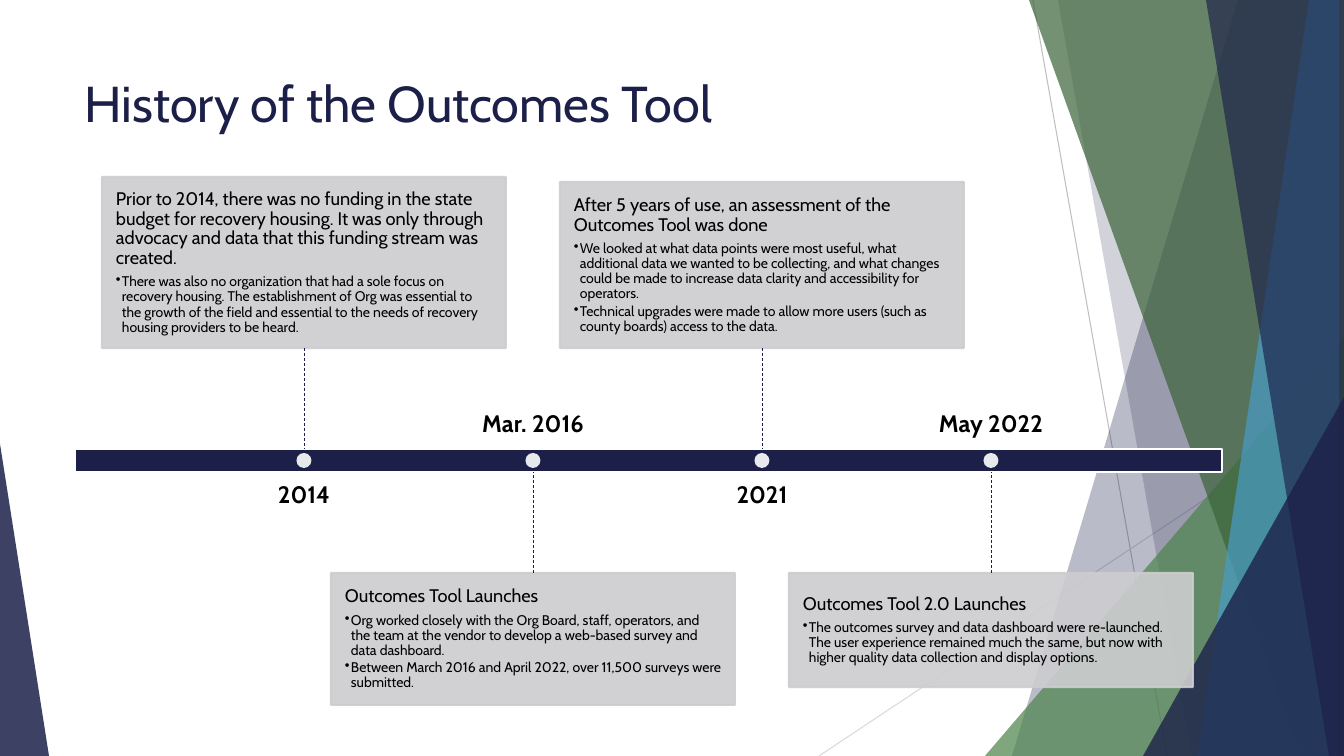
from lxml.etree import SubElement
from pptx import Presentation
from pptx.dml.color import RGBColor
from pptx.enum.dml import MSO_LINE
from pptx.enum.shapes import MSO_CONNECTOR, MSO_SHAPE
from pptx.enum.text import MSO_ANCHOR, PP_ALIGN
from pptx.oxml.ns import qn
from pptx.util import Pt

TITLE = "History of the Outcomes Tool"

# date, card height, heading, bullets; cards alternate above and below the bar
EVENTS = [
    ("2014", 171,
     "Prior to 2014, there was no funding in the state budget for recovery housing. "
     "It was only through advocacy and data that this funding stream was created.",
     ["There was also no organization that had a sole focus on recovery housing. "
      "The establishment of Org was essential to the growth of the field and essential "
      "to the needs of recovery housing providers to be heard."]),
    ("Mar. 2016", 132, "Outcomes Tool Launches",
     ["Org worked closely with the Org Board, staff, operators, and the team at "
      "the vendor to develop a web-based survey and data dashboard.",
      "Between March 2016 and April 2022, over 11,500 surveys were submitted."]),
    ("2021", 166,
     "After 5 years of use, an assessment of the Outcomes Tool was done",
     ["We looked at what data points were most useful, what additional data we wanted "
      "to be collecting, and what changes could be made to increase data clarity and "
      "accessibility for operators.",
      "Technical upgrades were made to allow more users (such as county boards) "
      "access to the data."]),
    ("May 2022", 114, "Outcomes Tool 2.0 Launches",
     ["The outcomes survey and data dashboard were re-launched. The user experience "
      "remained much the same, but now with higher quality data collection and "
      "display options."]),
]

THEME = {
    "font": "Cabin", "title": 36, "date": 17, "head": 13, "body": 10,
    "navy": "1C2049", "green": "4F844D", "moss": "3B633A", "sky": "489CC7",
    "card": "CDCDD0", "white": "FFFFFF", "text": "000000",
    "ray": "BFBFBF", "pale": "D9D9D9",
}

WIDE, HIGH = 1344, 756
RAYS = [((1033, 0), (1167, HIGH), "ray"), ((WIDE, 407), (819, HIGH), "pale")]
# ribbon: top x, right x, foot x; wedge: left, top, width, apex; then colour, opacity
DECOR = [
    ("ribbon", (1238, WIDE, 1012), "navy", 30),
    ("ribbon", (1058, WIDE, 1192), "navy", 20),
    ("wedge", (985, 337, 359, 1), "green", 72),
    ("ribbon", (1029, WIDE, 1301), "moss", 70),
    ("ribbon", (1309, 1339, 1197), "sky", 70),
    ("ribbon", (1206, WIDE, 1329), "navy", 65),
    ("wedge", (1143, 397, 201, 1), "navy", 80),
    ("wedge", (0, 444, 49, 0), "navy", 85),
]

BAR = (75, 449, 1147, 23)
FIRST, STEP = 304, 229
CARD, STEM, DOT = 404, 101, 15
DATE, TALL, GAP = 367, 67, 11
PAD, HANG = 14, 6
SCALE = 914400 / 100.8


def px(*nums):
    return [round(n * SCALE) for n in nums]


def put(item, **values):
    for name, value in values.items():
        setattr(item, name, value)


def tint(fill, name, alpha=100):
    fill.solid()
    fill.fore_color.rgb = RGBColor.from_string(THEME[name])
    if alpha < 100:
        for clr in fill._xPr.iter(qn("a:srgbClr")):
            SubElement(clr, qn("a:alpha"), val=str(alpha * 1000))


def paint(shape, fill, alpha=100, edge=None):
    shape.shadow.inherit = False
    tint(shape.fill, fill, alpha)
    if edge:
        tint(shape.line.fill, edge, alpha)
        shape.line.width = Pt(1.5)
    else:
        shape.line.fill.background()
    return shape


def rule(start, end, name, width):
    line = shapes.add_connector(MSO_CONNECTOR.STRAIGHT, *px(*start, *end))
    tint(line.line.fill, name)
    line.line.width = Pt(width)
    SubElement(line._element.spPr, qn("a:effectLst"))
    return line


def frame(shape, pad, anchor):
    box = shape.text_frame
    side = px(pad)[0]
    put(box, word_wrap=True, vertical_anchor=anchor, margin_left=side,
        margin_right=side, margin_top=side, margin_bottom=side)
    return box


def write(para, text, size, name="text", bold=False, **form):
    run = para.add_run()
    run.text = text
    put(run.font, name=THEME["font"], size=Pt(THEME[size]), bold=bold)
    run.font.color.rgb = RGBColor.from_string(THEME[name])
    put(para, **form)


def bullet(para):
    props = para._p.get_or_add_pPr()
    side = px(HANG)[0]
    props.set("marL", str(side))
    props.set("indent", str(-side))
    SubElement(props, qn("a:buChar"), char="•")


def ribbon(top, right, foot):
    path = shapes.build_freeform(top, 0, scale=SCALE)
    path.add_line_segments([(right, 0), (right, HIGH), (foot, HIGH)])
    return path.convert_to_shape()


def wedge(left, top, width, apex):
    shape = shapes.add_shape(MSO_SHAPE.ISOSCELES_TRIANGLE,
                             *px(left, top, width, HIGH - top))
    shape.adjustments[0] = apex
    return shape


def event(mid, above, date, high, head, notes):
    """Draw one date with its card, stem and dot."""
    top, foot = BAR[1], BAR[1] + BAR[3]
    edge = top if above else foot
    tip = top - STEM if above else foot + STEM
    left = mid - CARD // 2
    card = shapes.add_shape(MSO_SHAPE.RECTANGLE,
                            *px(left, tip - high if above else tip, CARD, high))
    paint(card, "card", 90, "card")
    box = frame(card, PAD, MSO_ANCHOR.MIDDLE)
    form = {"alignment": PP_ALIGN.LEFT, "line_spacing": 0.9}
    write(box.paragraphs[0], head, "head", space_after=Pt(4.5), **form)
    for note in notes:
        para = box.add_paragraph()
        write(para, note, "body", space_after=Pt(1.5), **form)
        bullet(para)

    stem = rule((mid, tip), (mid, edge), "navy", 0.5)
    stem.line.dash_style = MSO_LINE.DASH
    stem.begin_connect(card, 2 if above else 0)

    place = foot + GAP if above else top - GAP - TALL
    label = shapes.add_textbox(*px(mid - DATE / 2, place, DATE, TALL))
    box = frame(label, 0, MSO_ANCHOR.TOP if above else MSO_ANCHOR.BOTTOM)
    write(box.paragraphs[0], date, "date", bold=True, alignment=PP_ALIGN.CENTER,
          line_spacing=0.9, space_after=Pt(6))

    core = (top + foot) / 2
    dot = shapes.add_shape(MSO_SHAPE.OVAL,
                           *px(mid - DOT / 2, core - DOT / 2, DOT, DOT))
    paint(dot, "white", 90)


deck = Presentation()
deck.slide_width, deck.slide_height = px(WIDE, HIGH)
shapes = deck.slides.add_slide(deck.slide_layouts[6]).shapes

for start, end, name in RAYS:
    rule(start, end, name, 0.75)
MAKE = {"ribbon": ribbon, "wedge": wedge}
for kind, spots, name, alpha in DECOR:
    paint(MAKE[kind](*spots), name, alpha)

title = shapes.add_textbox(*px(75, 67, 948, 145))
box = title.text_frame
box.word_wrap = True
write(box.paragraphs[0], TITLE, "title", "navy")

paint(shapes.add_shape(MSO_SHAPE.RECTANGLE, *px(*BAR)), "navy", edge="white")
for i, item in enumerate(EVENTS):
    event(FIRST + i * STEP, i % 2 == 0, *item)

deck.save("out.pptx")
